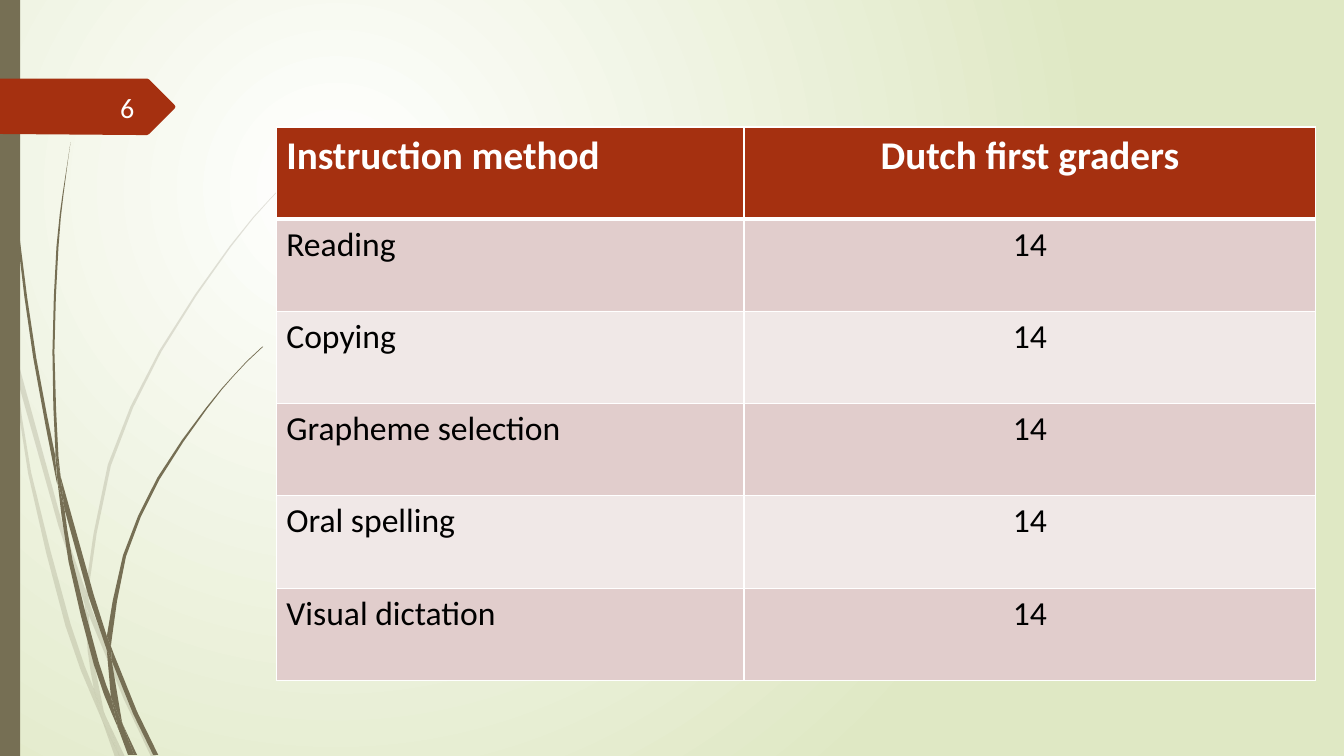
from lxml import etree
from pptx import Presentation
from pptx import util as u
from pptx.dml.color import RGBColor
from pptx.enum import shapes, text
from pptx.oxml import ns

PX = u.Inches(1) // 100
FONT = "Calibri"
OLIVE, RUST, WHITE, BLACK = "766F54", "A53010", "FFFFFF", "000000"
BANDS = ("E1CDCC", "F0E8E7")

PALE_WISPS = [
    [[(11, 350), (9, 322), (0, 282)], [(0, 299), (10, 344), (11, 350)]],
    [[(14, 345), (62, 520), (85, 586)], [(84, 599), (58, 522), (17, 376)]],
    [[(88, 596), (92, 607), (127, 692), (155, 751)], [(150, 751), (123, 694), (88, 610)]],
    [[(119, 751), (124, 751)], [(105, 711)]],
    [[(11, 350), (17, 376), (31, 469), (70, 619), (93, 683)],
     [(99, 707), (101, 714), (92, 693), (65, 621), (28, 470), (11, 350)]],
    [[(84, 599), (87, 646), (93, 683), (96, 692), (105, 711)],
     [(103, 706), (91, 646), (88, 610), (84, 599)]],
    [[(85, 586), (85, 584), (107, 461), (158, 348), (228, 244), (268, 197), (289, 175), (312, 153)],
     [(312, 154), (290, 175), (268, 198), (229, 245), (160, 349), (110, 462), (88, 584), (88, 596)]],
    [[(101, 714), (114, 751)], [(119, 751)]],
    [[(88, 608), (88, 610)], [(88, 596), (85, 586)], [(84, 599)]],
    [[(93, 683), (99, 707), (101, 714), (119, 751)], [(105, 711), (96, 692)]],
]

DARK_WISPS = [
    [[(3, 0), (4, 48), (7, 110), (17, 233), (33, 355), (56, 477), (57, 481)],
     [(55, 457), (55, 453), (36, 355), (19, 232), (8, 109), (5, 48), (4, 0)]],
    [[(60, 472), (93, 590), (106, 631)], [(106, 645), (88, 592), (64, 505)]],
    [[(110, 641), (113, 649), (136, 706), (157, 749)], [(152, 749), (132, 708), (111, 656)]],
    [[(57, 477), (64, 505), (72, 556), (98, 657), (110, 691)],
     [(116, 717), (117, 722), (111, 708), (93, 659), (68, 557), (57, 477)]],
    [[(60, 472), (58, 453), (54, 349), (58, 245), (63, 193), (70, 141)],
     [(62, 193), (56, 245), (52, 349), (55, 449), (60, 472)]],
    [[(133, 749), (136, 749)], [(122, 719)]],
    [[(57, 477), (64, 505)], [(60, 472), (55, 449)], [(55, 453)]],
    [[(106, 631), (122, 551), (156, 474), (204, 405), (231, 373), (245, 358), (260, 344)],
     [(261, 344), (245, 359), (231, 374), (205, 406), (158, 476), (125, 552), (111, 633), (110, 641)]],
    [[(117, 722), (127, 749)], [(131, 749)]],
    [[(106, 645), (110, 691), (116, 706), (122, 719)], [(121, 716), (111, 656), (109, 651), (106, 645)]],
    [[(106, 645), (109, 651), (111, 656)], [(110, 641), (106, 631)]],
    [[(110, 691), (116, 717), (117, 722), (130, 749)], [(133, 749), (122, 719), (116, 706)]],
]

BADGE = [[(0, 78), (146, 78)], [(148, 79), (173, 104)], [(174, 106), (173, 108)],
         [(148, 133), (146, 134)], [(136, 134), (0, 133)]]

ROWS = [("Instruction method", "Dutch first graders"), ("Reading", "14"), ("Copying", "14"),
        ("Grapheme selection", "14"), ("Oral spelling", "14"), ("Visual dictation", "14")]


def rgb(hex_color):
    return RGBColor.from_string(hex_color)


def paint(sp, color, opacity=100):
    sp.shadow.inherit = False
    sp.fill.solid()
    sp.fill.fore_color.rgb = rgb(color)
    sp.line.fill.background()
    if opacity < 100:
        clr = sp.element.spPr.find(".//" + ns.qn("a:srgbClr"))
        etree.SubElement(clr, ns.qn("a:alpha")).set("val", str(opacity * 1000))


def smooth(edge):
    if len(edge) < 5:
        return edge
    ends = [edge[0]] + edge + [edge[-1]]
    points = [edge[0]]
    for a, b, c, d in zip(ends, ends[1:], ends[2:], ends[3:]):
        if abs(c[1] - b[1]) > 30:
            points.append(tuple((9 * (q + r) - p - v) / 16 for p, q, r, v in zip(a, b, c, d)))
        points.append(c)
    return points


def add_outline(parent, edges, color, opacity=100):
    points = [(x * PX, y * PX) for edge in edges for x, y in smooth(edge)]
    builder = parent.shapes.build_freeform(*points[0])
    builder.add_line_segments(points[1:], close=True)
    paint(builder.convert_to_shape(), color, opacity)


def add_wisps(s, wisps, opacity):
    group = s.shapes.add_group_shape()
    for wisp in wisps:
        add_outline(group, wisp, OLIVE, opacity)


def add_background(s, inner, outer):
    fill = s.background.fill
    fill.gradient()
    for stop, color in zip(fill.gradient_stops, (inner, outer)):
        stop.color.rgb = rgb(color)
    grad = s.element.find(".//" + ns.qn("a:gradFill"))
    grad.remove(grad.find(ns.qn("a:lin")))
    circle = etree.SubElement(grad, ns.qn("a:path"), path="circle")
    etree.SubElement(circle, ns.qn("a:fillToRect"), l="50000", t="50000", r="100000", b="100000")


def write(tf, words, size, color, align, bold=False):
    p = tf.paragraphs[0]
    p.text = words
    p.alignment = align
    font = p.runs[0].font
    font.name, font.size, font.bold = FONT, u.Pt(size), bold
    font.color.rgb = rgb(color)


def add_number(s, number):
    tf = s.shapes.add_textbox(58 * PX, 86 * PX, 85 * PX, 40 * PX).text_frame
    tf.word_wrap = True
    tf.vertical_anchor = text.MSO_ANCHOR.MIDDLE
    write(tf, number, 20, "FEFFFF", text.PP_ALIGN.RIGHT)


def add_borders(cell, widths):
    tc_pr = cell._tc.get_or_add_tcPr()
    for side, width in zip("LRTB", widths):
        ln = etree.SubElement(tc_pr, ns.qn("a:ln" + side), w=str(u.Pt(width)))
        fill = etree.SubElement(ln, ns.qn("a:solidFill"))
        etree.SubElement(fill, ns.qn("a:srgbClr"), val=WHITE)


def add_grid(s):
    widths, height = (464, 567), 549
    table = s.shapes.add_table(len(ROWS), len(widths), 274 * PX, 126 * PX,
                               sum(widths) * PX, height * PX).table
    table.first_row = True
    table.horz_banding = False
    for col, width in zip(table.columns, widths):
        col.width = width * PX
    for i, row in enumerate(ROWS):
        table.rows[i].height = height * PX // len(ROWS)
        head = i == 0
        for j, words in enumerate(row):
            cell = table.cell(i, j)
            add_borders(cell, (1, 1, 3 if i == 1 else 1, 3 if head else 1))
            cell.fill.solid()
            cell.fill.fore_color.rgb = rgb(RUST if head else BANDS[(i - 1) % 2])
            write(cell.text_frame, words, 28 if head else 24, WHITE if head else BLACK,
                  text.PP_ALIGN.CENTER if j else text.PP_ALIGN.LEFT, head)


def main():
    prs = Presentation()
    prs.slide_width, prs.slide_height = 1333 * PX, 750 * PX
    s = prs.slides.add_slide(prs.slide_layouts[6])
    add_background(s, WHITE, "DFE8C4")
    add_wisps(s, PALE_WISPS, 20)
    add_wisps(s, DARK_WISPS, 100)
    bar = s.shapes.add_shape(shapes.MSO_SHAPE.RECTANGLE, 0, 0, 20 * PX, 750 * PX)
    paint(bar, OLIVE)
    add_outline(s, BADGE, RUST)
    add_number(s, "6")
    add_grid(s)
    prs.save("out.pptx")


if __name__ == "__main__":
    main()
